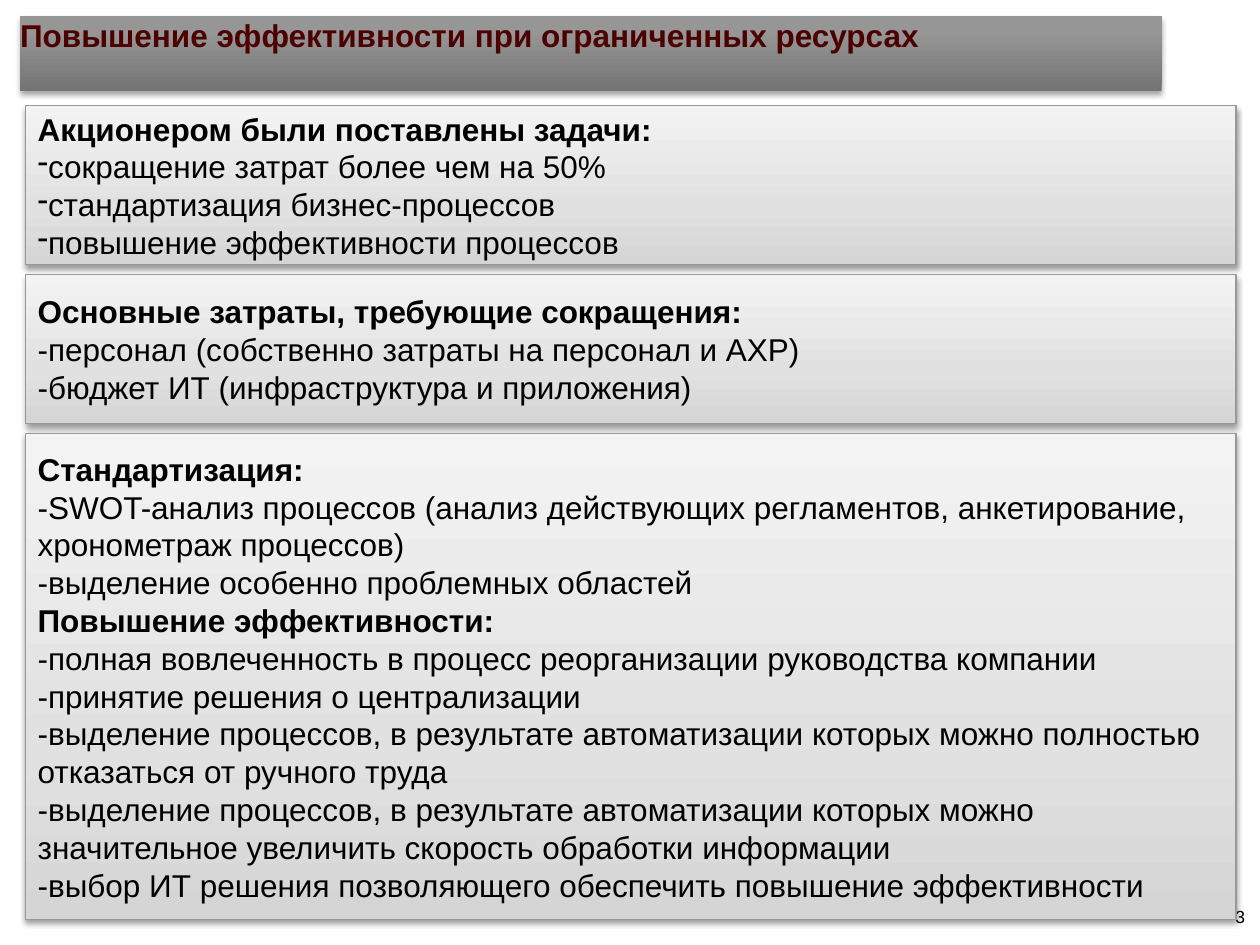
from lxml.etree import SubElement
from pptx import Presentation
from pptx.dml.color import RGBColor
from pptx.enum.shapes import MSO_SHAPE as Shape
from pptx.enum.text import MSO_ANCHOR as Anchor, PP_ALIGN as Align
from pptx.oxml.ns import qn
from pptx.util import Inches, Pt

COLORS = {"text": "000000", "title": "4C0000", "border": "989898", "shadow": "000000"}
TITLE_STOPS = [(0, "747474"), (80, "969696"), (100, "979797")]
PANEL_STOPS = [(0, "D5D5D5"), (35, "E1E1E1"), (100, "F3F3F3")]
LEFT, WIDTH = 0.2, 9.61
TOP, GAP = 0.84, 0.08

# Height, whether items carry real dash bullets, lines (headings end with a colon)
PANELS = [
    (1.26, True, [
        "Акционером были поставлены задачи:",
        "сокращение затрат более чем на 50%",
        "стандартизация бизнес-процессов",
        "повышение эффективности процессов",
    ]),
    (1.18, False, [
        "Основные затраты, требующие сокращения:",
        "-персонал (собственно затраты на персонал и АХР)",
        "-бюджет ИТ (инфраструктура и приложения)",
    ]),
    (3.86, False, [
        "Стандартизация:",
        "-SWOT-анализ процессов (анализ действующих регламентов, анкетирование, "
        "хронометраж процессов)",
        "-выделение особенно проблемных областей",
        "Повышение эффективности:",
        "-полная вовлеченность в процесс реорганизации руководства компании",
        "-принятие решения о централизации",
        "-выделение процессов, в результате автоматизации которых можно полностью "
        "отказаться от ручного труда",
        "-выделение процессов, в результате автоматизации которых можно "
        "значительное увеличить скорость обработки информации",
        "-выбор ИТ решения позволяющего обеспечить повышение эффективности",
    ]),
]


def add_shaded_box(box, stops, shadow_alpha, shadow_distance):
    """Add a rectangle with a bottom-to-top gradient and a soft shadow below it."""
    block = slide.shapes.add_shape(Shape.RECTANGLE, *map(Inches, box))
    block.fill.gradient()
    block.fill.gradient_angle = 90
    properties = block._element.spPr
    stop_list = properties.find(".//" + qn("a:gsLst"))
    for old_stop in list(stop_list):
        stop_list.remove(old_stop)
    for position, color in stops:
        stop = SubElement(stop_list, qn("a:gs"), pos=str(position * 1000))
        SubElement(stop, qn("a:srgbClr"), val=color)
    block.line.fill.background()
    block.shadow.inherit = False
    shadow = SubElement(properties.find(qn("a:effectLst")), qn("a:outerShdw"),
                        blurRad=str(Pt(3.1)), dist=str(Pt(shadow_distance)),
                        dir="5400000", rotWithShape="0")
    tint = SubElement(shadow, qn("a:srgbClr"), val=COLORS["shadow"])
    SubElement(tint, qn("a:alpha"), val=str(shadow_alpha * 1000))
    block.text_frame.word_wrap = True
    return block


def write(paragraph, text, color, size=18, bold=False, align=Align.LEFT):
    paragraph.alignment = align
    run = paragraph.add_run()
    run.text = text
    for attribute, value in {"name": "Arial", "size": Pt(size), "bold": bold}.items():
        setattr(run.font, attribute, value)
    run.font.color.rgb = RGBColor.from_string(COLORS[color])


no_margins = dict.fromkeys(["margin_left", "margin_top", "margin_right", "margin_bottom"], 0)

deck = Presentation()
deck.slide_width, deck.slide_height = Inches(10), Inches(7.5)
slide = deck.slides.add_slide(deck.slide_layouts[6])

page_number = slide.shapes.add_textbox(*map(Inches, (9.29, 7.18, 0.59, 0.18))).text_frame
for attribute, value in {**no_margins, "word_wrap": True,
                         "vertical_anchor": Anchor.BOTTOM}.items():
    setattr(page_number, attribute, value)
write(page_number.paragraphs[0], "3", "text", size=10, align=Align.RIGHT)

heading = add_shaded_box((0.16, 0.13, 9.06, 0.59), TITLE_STOPS, 35, 1.8).text_frame
for attribute, value in {**no_margins, "vertical_anchor": Anchor.TOP}.items():
    setattr(heading, attribute, value)
write(heading.paragraphs[0], "Повышение эффективности при ограниченных ресурсах",
      "title", bold=True)

top = TOP
for height, bulleted, lines in PANELS:
    panel = add_shaded_box((LEFT, top, WIDTH, height), PANEL_STOPS, 38, 1.6)
    panel.line.color.rgb = RGBColor.from_string(COLORS["border"])
    panel.line.width = Pt(0.75)
    body = panel.text_frame
    body.vertical_anchor = Anchor.MIDDLE
    for index, line in enumerate(lines):
        paragraph = body.add_paragraph() if index else body.paragraphs[0]
        is_heading = line.endswith(":")
        if bulleted and not is_heading:
            SubElement(paragraph._p.get_or_add_pPr(), qn("a:buChar"), char="-")
        write(paragraph, line, "text", bold=is_heading)
    top += height + GAP

deck.save("out.pptx")
